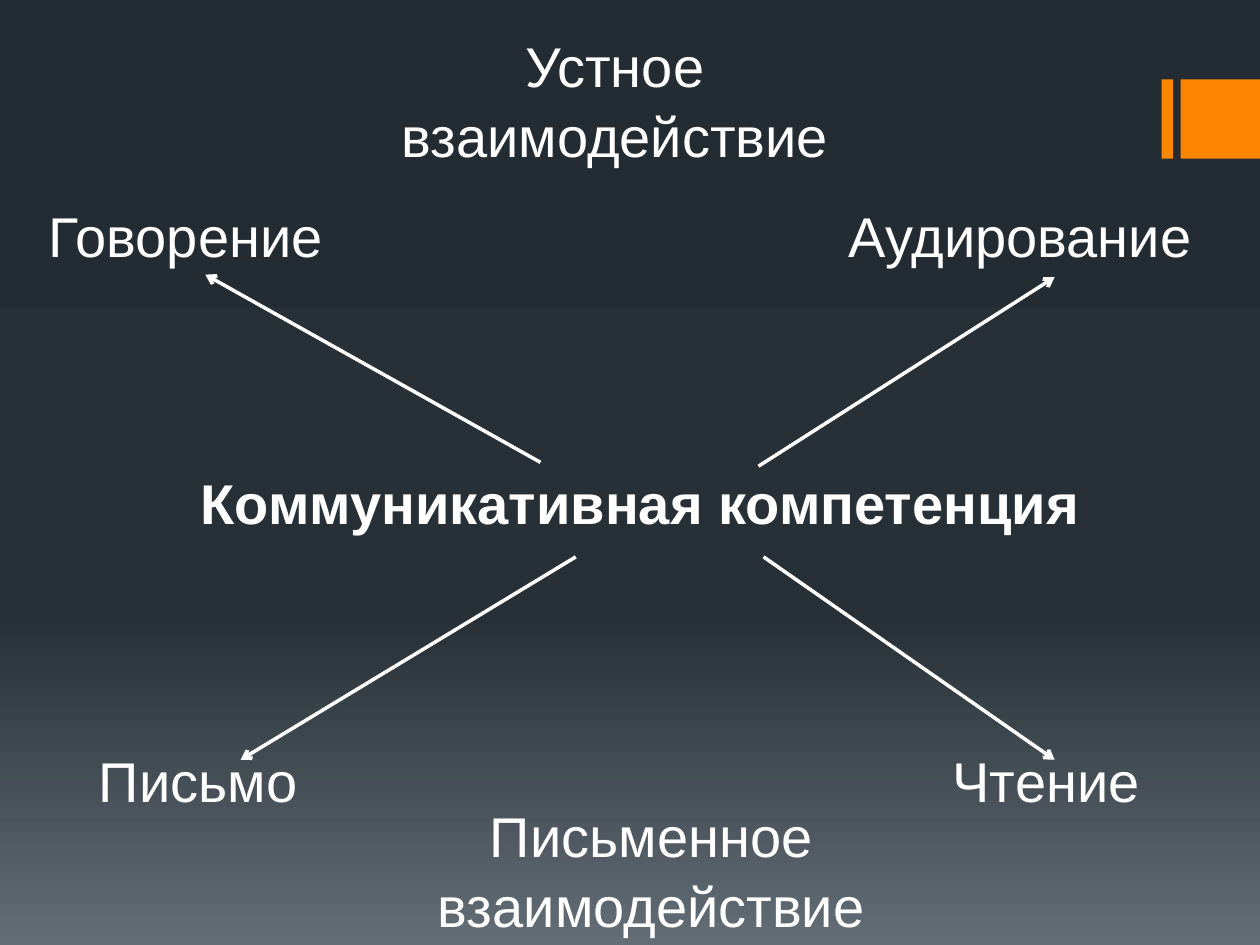
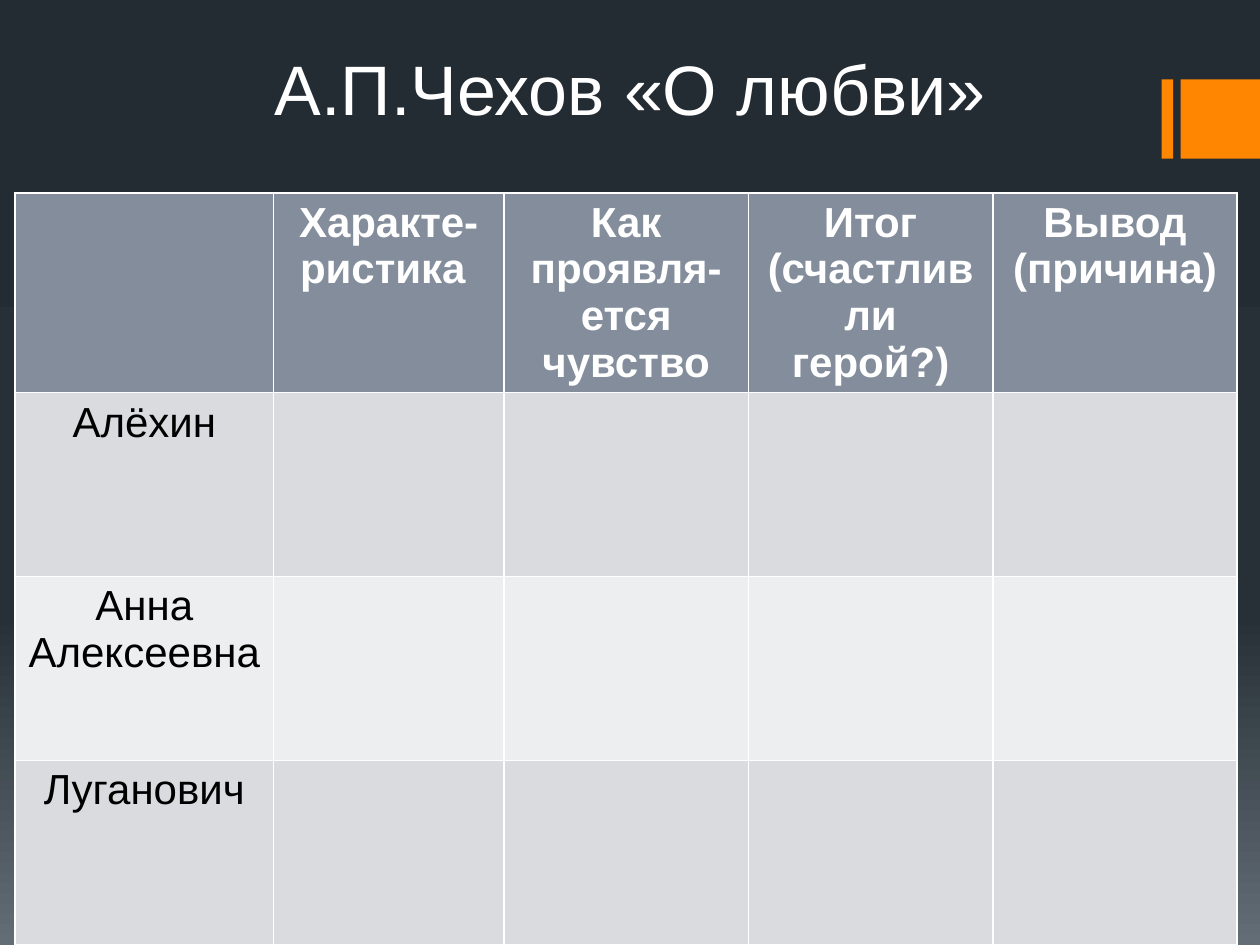
"""Build two slides: a communicative competence diagram and a table on a Chekhov story."""
from copy import deepcopy
from dataclasses import dataclass

from lxml import etree
from pptx import Presentation
from pptx import util as u
from pptx.dml.color import RGBColor
from pptx.enum import shapes, text
from pptx.oxml import ns


@dataclass(frozen=True)
class Theme:
    """Colours, font and type sizes shared by the slides."""
    font: str = "Arial"
    white: str = "FFFFFF"
    black: str = "000000"
    accent: str = "FF8600"
    header: str = "838D9B"
    bands: tuple = ("D9DBDE", "EDEEEF")
    backdrop: tuple = ((0, "242C33"), (0.65, "273037"), (1, "636D76"))
    title_size: int = 40
    label_size: int = 32
    table_size: int = 24
    label_spacing: float = 1.05
    arrow_width: int = 2


THEME = Theme()
LABEL_HEIGHT = 0.79
TITLE_WIDTH = 7.72
ACCENT_BARS = [(9.22, 0.09), (9.37, 0.63)]
ACCENT_TOP, ACCENT_HEIGHT = 0.63, 0.63

COMPETENCE = "Коммуникативная компетенция"
SKILLS = [
    ("Говорение", 0, 1.39, 2.95),
    ("Аудирование ", 6.62, 1.39, 2.95),
    ("Письмо ", 0.16, 5.72, 2.95),
    ("Чтение ", 6.89, 5.72, 2.95),
    ("Устное взаимодействие", 2.87, 0.6, 4.02),
    ("Письменное взаимодействие", 3.24, 6.71, 3.86),
]
ARROWS = [
    ((4.29, 3.67), (1.63, 2.18)),
    ((6.02, 3.7), (8.37, 2.2)),
    ((4.57, 4.42), (1.91, 6.03)),
    ((6.06, 4.42), (8.37, 6.03)),
]

STORY = "А.П.Чехов «О любви»"
QUESTIONS = ["", "Характе-ристика ", "Как проявля-ется чувство",
             "Итог (счастлив ли герой?)", "Вывод (причина)"]
HEROES = ["Алёхин", "Анна Алексеевна", "Луганович"]
COLUMN_WIDTHS = [2.05, 1.83, 1.94, 1.94, 1.94]
ROW_HEIGHT = 1.46


def rgb(value):
    return RGBColor.from_string(value)


def inches(*values):
    return [u.Inches(value) for value in values]


def write(frame, content, size, color=THEME.white, bold=False, spacing=1.0):
    paragraph = frame.paragraphs[0]
    paragraph.alignment = text.PP_ALIGN.CENTER
    paragraph.line_spacing = spacing
    run = paragraph.add_run()
    run.text = content
    for name, value in {"name": THEME.font, "size": u.Pt(size), "bold": bold}.items():
        setattr(run.font, name, value)
    run.font.color.rgb = rgb(color)


def fill_label(shape, content, size, bold=False):
    frame = shape.text_frame
    settings = {"word_wrap": True, "auto_size": text.MSO_AUTO_SIZE.NONE,
                "vertical_anchor": text.MSO_ANCHOR.BOTTOM}
    for name, value in settings.items():
        setattr(frame, name, value)
    write(frame, content, size, bold=bold, spacing=THEME.label_spacing)


def paint_background(master):
    fill = master.background.fill
    fill.gradient()
    fill.gradient_angle = 270
    stop_list = master.element.find(".//" + ns.qn("a:gsLst"))
    stop_list.append(deepcopy(stop_list[-1]))
    for stop, (position, color) in zip(fill.gradient_stops, THEME.backdrop):
        stop.position = position
        stop.color.rgb = rgb(color)


def add_slide(presentation, title, left, top, size, bold=False):
    slide = presentation.slides.add_slide(presentation.slide_layouts.get_by_name("Title Only"))
    for bar_left, bar_width in ACCENT_BARS:
        bar = slide.shapes.add_shape(
            shapes.MSO_SHAPE.RECTANGLE, *inches(bar_left, ACCENT_TOP, bar_width, ACCENT_HEIGHT))
        bar.shadow.inherit = False
        bar.fill.solid()
        bar.fill.fore_color.rgb = rgb(THEME.accent)
        bar.line.fill.background()
    shape = slide.shapes.title
    box = inches(left, top, TITLE_WIDTH, LABEL_HEIGHT)
    for name, value in zip(("left", "top", "width", "height"), box):
        setattr(shape, name, value)
    fill_label(shape, title, size, bold)
    return slide


def add_arrow(slide, start, end):
    arrow = slide.shapes.add_connector(shapes.MSO_CONNECTOR.STRAIGHT, *inches(*start, *end))
    arrow.line.color.rgb = rgb(THEME.white)
    arrow.line.width = u.Pt(THEME.arrow_width)
    properties = arrow.element.spPr
    etree.SubElement(properties.find(ns.qn("a:ln")), ns.qn("a:tailEnd"), type="arrow")
    etree.SubElement(properties, ns.qn("a:effectLst"))


def build_competence(presentation):
    slide = add_slide(presentation, COMPETENCE, 1.22, 3.51, THEME.label_size, bold=True)
    for content, left, top, width in SKILLS:
        label = slide.shapes.add_textbox(*inches(left, top, width, LABEL_HEIGHT))
        fill_label(label, content, THEME.label_size)
    for start, end in ARROWS:
        add_arrow(slide, start, end)


def build_story(presentation):
    slide = add_slide(presentation, STORY, 1.14, 0.29, THEME.title_size)
    rows = [QUESTIONS] + [[hero] + [""] * (len(QUESTIONS) - 1) for hero in HEROES]
    table = slide.shapes.add_table(
        len(rows), len(QUESTIONS),
        *inches(0.12, 1.53, sum(COLUMN_WIDTHS), ROW_HEIGHT * len(rows))).table
    for column, width in zip(table.columns, COLUMN_WIDTHS):
        column.width = u.Inches(width)
    for row_index, row in enumerate(rows):
        is_header = row_index == 0
        band = THEME.header if is_header else THEME.bands[(row_index - 1) % 2]
        color = THEME.white if is_header else THEME.black
        for column_index, content in enumerate(row):
            cell = table.cell(row_index, column_index)
            cell.fill.solid()
            cell.fill.fore_color.rgb = rgb(band)
            if content:
                write(cell.text_frame, content, THEME.table_size, color, is_header)


def main():
    presentation = Presentation()
    presentation.slide_width, presentation.slide_height = inches(10, 7.5)
    paint_background(presentation.slide_master)
    build_competence(presentation)
    build_story(presentation)
    presentation.save("out.pptx")


if __name__ == "__main__":
    main()
